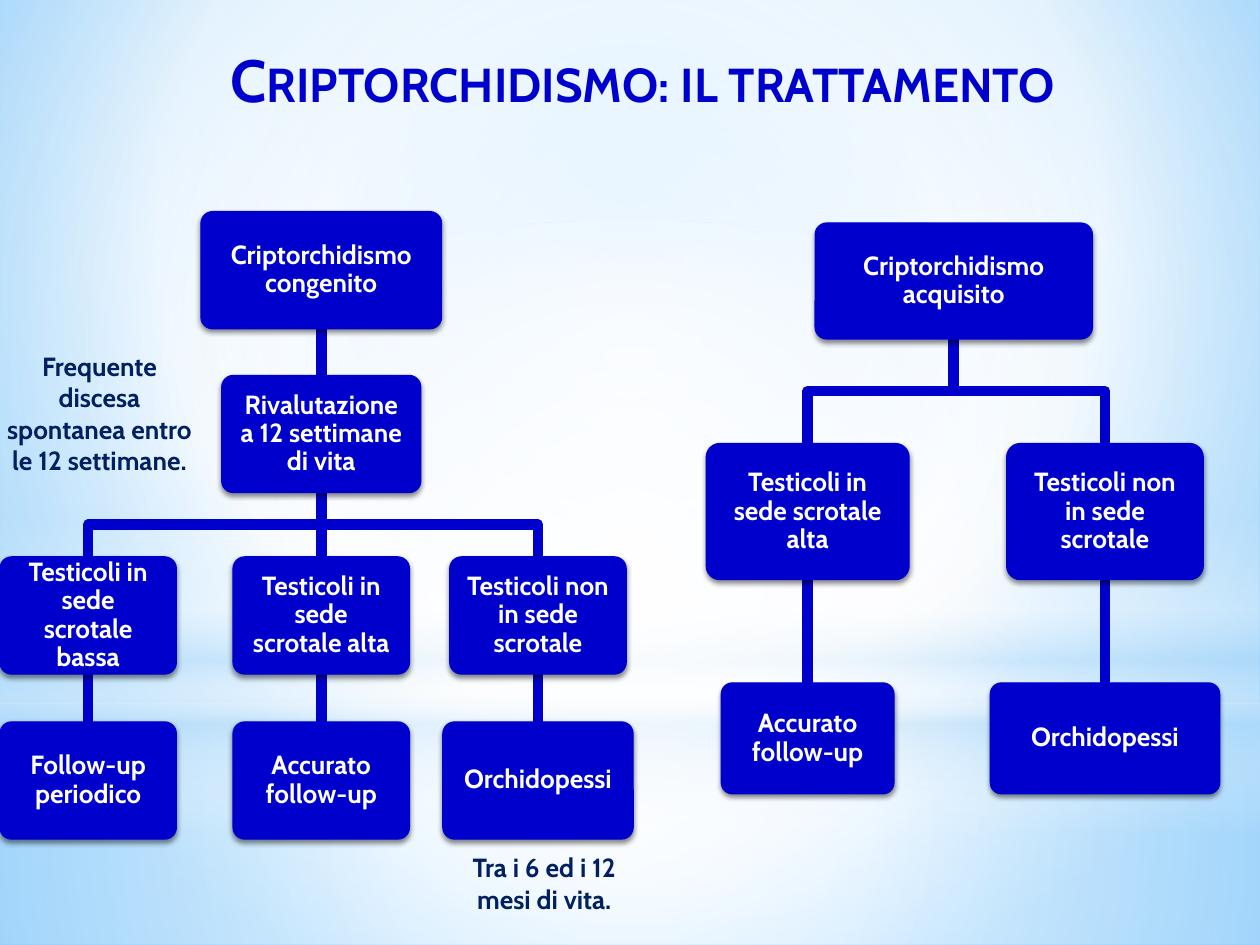
import pptx
import pptx.util
import pptx.dml.color
import pptx.enum.shapes
import pptx.enum.text
import pptx.oxml
import pptx.oxml.ns
from lxml import etree

Inches, Pt = pptx.util.Inches, pptx.util.Pt
RGB = pptx.dml.color.RGBColor
Kind = pptx.enum.shapes.MSO_SHAPE
Align, Anchor = pptx.enum.text.PP_ALIGN, pptx.enum.text.MSO_ANCHOR
qn = pptx.oxml.ns.qn
NS = 'xmlns:a="http://schemas.openxmlformats.org/drawingml/2006/main"'

BLUE = RGB(0x00, 0x00, 0xCC)
NAVY = RGB(0x00, 0x20, 0x60)
WHITE = RGB(0xFF, 0xFF, 0xFF)
PALE = RGB(0xB4, 0xDC, 0xFA)
SKY = RGB(0x9E, 0xD5, 0xFF)
DEEP = RGB(0x5B, 0xB9, 0xFF)
FONT = "Cabin"

# Content
TITLE = "Criptorchidismo: il trattamento"
NOTES = [
    ("Frequente discesa spontanea entro le 12 settimane.", (-0.12, 2.73, 1.77, 1.34)),
    ("Tra i 6 ed i 12 mesi di vita.", (3.43, 6.71, 1.73, 0.79)),
]
# Each tree: rows of (top, height), then nodes of
# (text, row, centre, width, index of parent)
TREES = [
    ([(1.68, 0.93), (2.98, 0.93), (4.42, 0.93), (5.73, 0.93)], [
        ("Criptorchidismo congenito", 0, 2.55, 1.91, None),
        ("Rivalutazione a 12 settimane di vita", 1, 2.55, 1.58, 0),
        ("Testicoli in sede scrotale bassa", 2, 0.7, 1.4, 1),
        ("Testicoli in sede scrotale alta", 2, 2.55, 1.4, 1),
        ("Testicoli non in sede scrotale", 2, 4.27, 1.4, 1),
        ("Follow-up periodico", 3, 0.7, 1.4, 2),
        ("Accurato follow-up", 3, 2.55, 1.4, 3),
        ("Orchidopessi", 3, 4.27, 1.51, 4),
    ]),
    ([(1.77, 0.92), (3.52, 1.08), (5.42, 0.88)], [
        ("Criptorchidismo acquisito", 0, 7.57, 2.2, None),
        ("Testicoli in sede scrotale alta", 1, 6.41, 1.61, 0),
        ("Testicoli non in sede scrotale", 1, 8.77, 1.56, 0),
        ("Accurato follow-up", 2, 6.41, 1.37, 1),
        ("Orchidopessi", 2, 8.77, 1.82, 2),
    ]),
]

# Backdrop: stops are (place, colour, opacity) in percent
MID = (50, 50, 50, 50)
PAGE = [(0, SKY, 100), (60, WHITE, 100), (100, DEEP, 100)]
LAYERS = [
    (Kind.RECTANGLE, (0, 5.58, 10, 1.92), MID,
     [(0, WHITE, 91), (37, WHITE, 76), (100, PALE, 79)]),
    (Kind.RECTANGLE, (0, 0, 10, 5.58), MID,
     [(0, WHITE, 89), (48, WHITE, 62), (100, PALE, 79)]),
    (Kind.RECTANGLE, (0, 4.12, 10, 2.5), None,
     [(0, WHITE, 0), (29, WHITE, 30), (45, PALE, 40),
      (55, WHITE, 26), (65, PALE, 60), (100, WHITE, 0)]),
    (Kind.OVAL, (0, 1.75, 10, 5.58), MID,
     [(0, WHITE, 100), (56, WHITE, 0)]),
]

deck = pptx.Presentation()
deck.slide_width, deck.slide_height = Inches(10), Inches(7.5)
slide = deck.slides.add_slide(deck.slide_layouts[6])
shapes = slide.shapes


def shade(fill, root, stops, focus):
    """Give a fill a gradient, round a focus or from top to bottom."""
    fill.solid()
    marks = "".join(
        f'<a:gs pos="{at * 1000}"><a:srgbClr val="{hue}">'
        f'<a:alpha val="{alpha * 1000}"/></a:srgbClr></a:gs>'
        for at, hue, alpha in stops)
    if focus:
        l, t, r, b = (side * 1000 for side in focus)
        way = (f'<a:path path="circle"><a:fillToRect l="{l}" t="{t}" '
               f'r="{r}" b="{b}"/></a:path>')
    else:
        way = '<a:lin ang="5400000" scaled="0"/>'
    old = next(root.iter(qn("a:solidFill")))
    old.getparent().replace(old, pptx.oxml.parse_xml(
        f'<a:gradFill {NS} rotWithShape="1"><a:gsLst>{marks}</a:gsLst>{way}</a:gradFill>'))


def write(shape, text, size=15, color=WHITE, inset=(0.1, 0.05), anchor=Anchor.TOP,
          indent=0, space=None, after=0, small=False):
    frame = shape.text_frame
    frame.word_wrap = True
    frame.vertical_anchor = anchor
    frame.margin_left = frame.margin_right = Inches(inset[0])
    frame.margin_top = frame.margin_bottom = Inches(inset[1])
    para = frame.paragraphs[0]
    para.alignment = Align.CENTER
    para.space_after = Pt(after)
    if space:
        para.line_spacing = space
    if indent:
        props = para._p.get_or_add_pPr()
        props.set("marL", str(Inches(indent)))
        props.set("indent", "0")
    run = para.add_run()
    run.text = text
    run.font.name, run.font.size, run.font.bold = FONT, Pt(size), True
    run.font.color.rgb = color
    if small:
        run.font._element.set("cap", "small")


def place(kind, at):
    shape = shapes.add_shape(kind, *map(Inches, at))
    shape.shadow.inherit = False
    return shape


def link(x1, y1, x2, y2):
    """Join two boxes: straight down, or with a bend halfway."""
    if x1 == x2:
        line = shapes.add_connector(
            pptx.enum.shapes.MSO_CONNECTOR.STRAIGHT, *map(Inches, (x1, y1, x2, y2)))
        etree.SubElement(line._element.spPr, qn("a:effectLst"))
    else:
        half = (y1 + y2) / 2
        pen = shapes.build_freeform(Inches(x1), Inches(y1))
        pen.add_line_segments(
            [(Inches(x), Inches(y)) for x, y in ((x1, half), (x2, half), (x2, y2))],
            close=False)
        line = pen.convert_to_shape()
        line.fill.background()
        line.shadow.inherit = False
    line.line.color.rgb = BLUE
    line.line.width = Pt(6)
    etree.SubElement(line._element.spPr.find(qn("a:ln")), qn("a:round"))


def add_box(text, at):
    box = place(Kind.ROUNDED_RECTANGLE, at)
    box.adjustments[0] = 0.1
    box.fill.solid()
    box.fill.fore_color.rgb = box.line.color.rgb = BLUE
    box.line.width = Pt(0.75)
    box._element.spPr.find(qn("a:effectLst")).append(pptx.oxml.parse_xml(
        f'<a:outerShdw {NS} blurRad="{Pt(3.1)}" dist="{Pt(1.8)}" dir="5400000" '
        'rotWithShape="0"><a:srgbClr val="000000"><a:alpha val="45000"/>'
        '</a:srgbClr></a:outerShdw>'))
    write(box, text, inset=(0.09, 0.09), anchor=Anchor.MIDDLE, space=0.9)


# Backdrop
shade(slide.background.fill, slide._element, PAGE, (20, 10, 20, 60))
for kind, at, focus, stops in LAYERS:
    layer = place(kind, at)
    shade(layer.fill, layer._element.spPr, stops, focus)
    layer.line.fill.background()

# Title and notes
head = shapes.add_textbox(*map(Inches, (0, 0.29, 10, 0.79)))
write(head, TITLE, size=34, color=BLUE, indent=0.2, small=True)
for text, at in NOTES:
    note = shapes.add_textbox(*map(Inches, at))
    write(note, text, color=NAVY, indent=0.05, after=3)

# Trees: links first, boxes over them
for rows, nodes in TREES:
    for text, row, x, width, up in nodes:
        if up is not None:
            top, high = rows[nodes[up][1]]
            link(nodes[up][2], top + high, x, rows[row][0])
    for text, row, x, width, up in nodes:
        top, high = rows[row]
        add_box(text, (x - width / 2, top, width, high))

deck.save("out.pptx")
